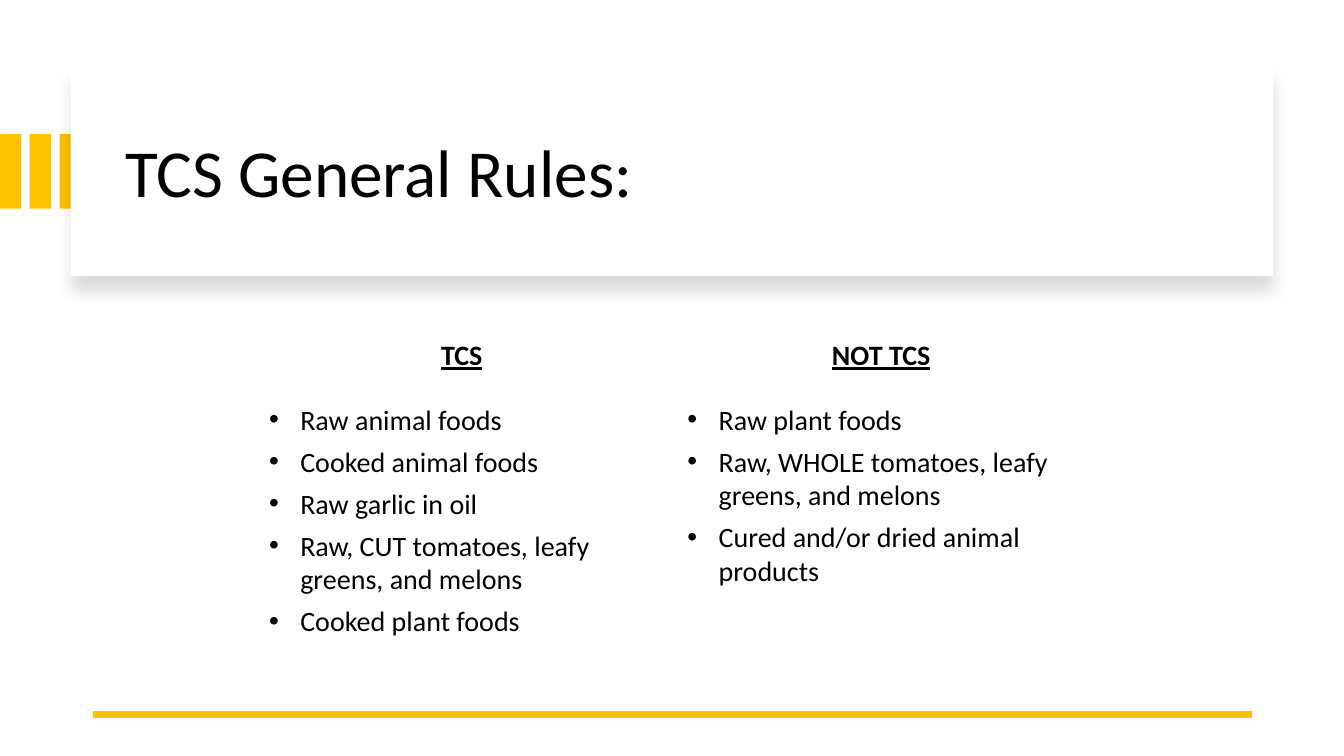
from dataclasses import dataclass

from lxml.etree import SubElement
from pptx import Presentation
from pptx.dml.color import RGBColor
from pptx.enum.shapes import MSO_CONNECTOR as Connector, MSO_SHAPE as Shape
from pptx.enum.text import MSO_ANCHOR as Anchor, MSO_AUTO_SIZE as AutoSize, PP_ALIGN as Align
from pptx.oxml.ns import qn
from pptx.util import Inches, Pt


@dataclass(frozen=True)
class Theme:
    font: str = "Calibri"
    text: str = "000000"
    accent: str = "FFC000"
    panel: str = "FFFFFF"
    title_size: int = 48
    body_size: int = 20
    rule_width: float = 4.5


class SlideBuilder:
    """Draws styled elements on one title-only slide."""

    def __init__(self, presentation, theme):
        self.theme = theme
        self.slide = presentation.slides.add_slide(presentation.slide_layouts[5])
        self.shapes = self.slide.shapes

    def rectangle(self, left, top, width, height, color, shadow=False):
        shape = self.shapes.add_shape(
            Shape.RECTANGLE, Inches(left), Inches(top), Inches(width), Inches(height))
        shape.fill.solid()
        shape.fill.fore_color.rgb = RGBColor.from_string(color)
        shape.line.fill.background()
        shape.shadow.inherit = False
        if shadow:
            effects = shape._element.spPr.find(qn("a:effectLst"))
            outer = SubElement(effects, qn("a:outerShdw"), blurRad=str(Pt(11)),
                               dist=str(Pt(10)), dir="5400000", algn="t", rotWithShape="0")
            shade = SubElement(outer, qn("a:srgbClr"), val=self.theme.text)
            SubElement(shade, qn("a:alpha"), val="15000")

    def set_text(self, paragraph, text, size, align=Align.LEFT, bold=False,
                 underline=False, bullet=False, after=0):
        paragraph.text = text
        paragraph.alignment = align
        paragraph.space_before = Pt(0)
        paragraph.space_after = Pt(after)
        if bullet:
            properties = paragraph._p.get_or_add_pPr()
            properties.set("marL", str(Inches(0.31)))
            properties.set("indent", str(-Inches(0.31)))
            SubElement(properties, qn("a:buFont"), typeface="Arial")
            SubElement(properties, qn("a:buChar"), char="•")
        font = paragraph.runs[0].font
        font.name = self.theme.font
        font.size = Pt(size)
        font.bold = bold
        font.underline = underline
        font.color.rgb = RGBColor.from_string(self.theme.text)

    def title(self, text, left, top, width, height):
        title = self.shapes.title
        title.left, title.top = Inches(left), Inches(top)
        title.width, title.height = Inches(width), Inches(height)
        frame = title.text_frame
        frame.auto_size = AutoSize.NONE
        frame.vertical_anchor = Anchor.MIDDLE
        self.set_text(frame.paragraphs[0], text, self.theme.title_size)
        frame.paragraphs[0].line_spacing = 0.9
        self.shapes._spTree.append(title._element)

    def text_box(self, lines, left, top, width, height, **style):
        box = self.shapes.add_textbox(Inches(left), Inches(top), Inches(width), Inches(height))
        frame = box.text_frame
        frame.word_wrap = True
        for index, line in enumerate(lines):
            paragraph = frame.add_paragraph() if index else frame.paragraphs[0]
            self.set_text(paragraph, line, self.theme.body_size, after=6, **style)

    def column(self, heading, rules, left, width):
        self.text_box([heading], left, 3.3, width, 0.64,
                      align=Align.CENTER, bold=True, underline=True)
        self.text_box(rules, left, 3.94, width, 2.87, bullet=True)

    def rule(self, start, end, top):
        line = self.shapes.add_connector(
            Connector.STRAIGHT, Inches(start), Inches(top), Inches(end), Inches(top))
        line.line.color.rgb = RGBColor.from_string(self.theme.accent)
        line.line.width = Pt(self.theme.rule_width)
        SubElement(line._element.spPr, qn("a:effectLst"))


def main():
    presentation = Presentation()
    presentation.slide_width = Inches(13.33)
    presentation.slide_height = Inches(7.5)
    theme = Theme()
    builder = SlideBuilder(presentation, theme)

    for index in range(3):
        builder.rectangle(index * 0.59 / 2, 1.33, 0.21, 0.74, theme.accent)
    builder.rectangle(0.7, 0.67, 11.93, 2.07, theme.panel, shadow=True)
    builder.title("TCS General Rules:", 1.14, 0.89, 11.13, 1.7)
    builder.rule(12.42, 0.92, 7.09)
    builder.column("TCS", [
        "Raw animal foods",
        "Cooked animal foods",
        "Raw garlic in oil",
        "Raw, CUT tomatoes, leafy greens, and melons",
        "Cooked plant foods",
    ], 2.57, 4.02)
    builder.column("NOT TCS", [
        "Raw plant foods",
        "Raw, WHOLE tomatoes, leafy greens, and melons",
        "Cured and/or dried animal products",
    ], 6.72, 4.04)

    presentation.save("out.pptx")


if __name__ == "__main__":
    main()
